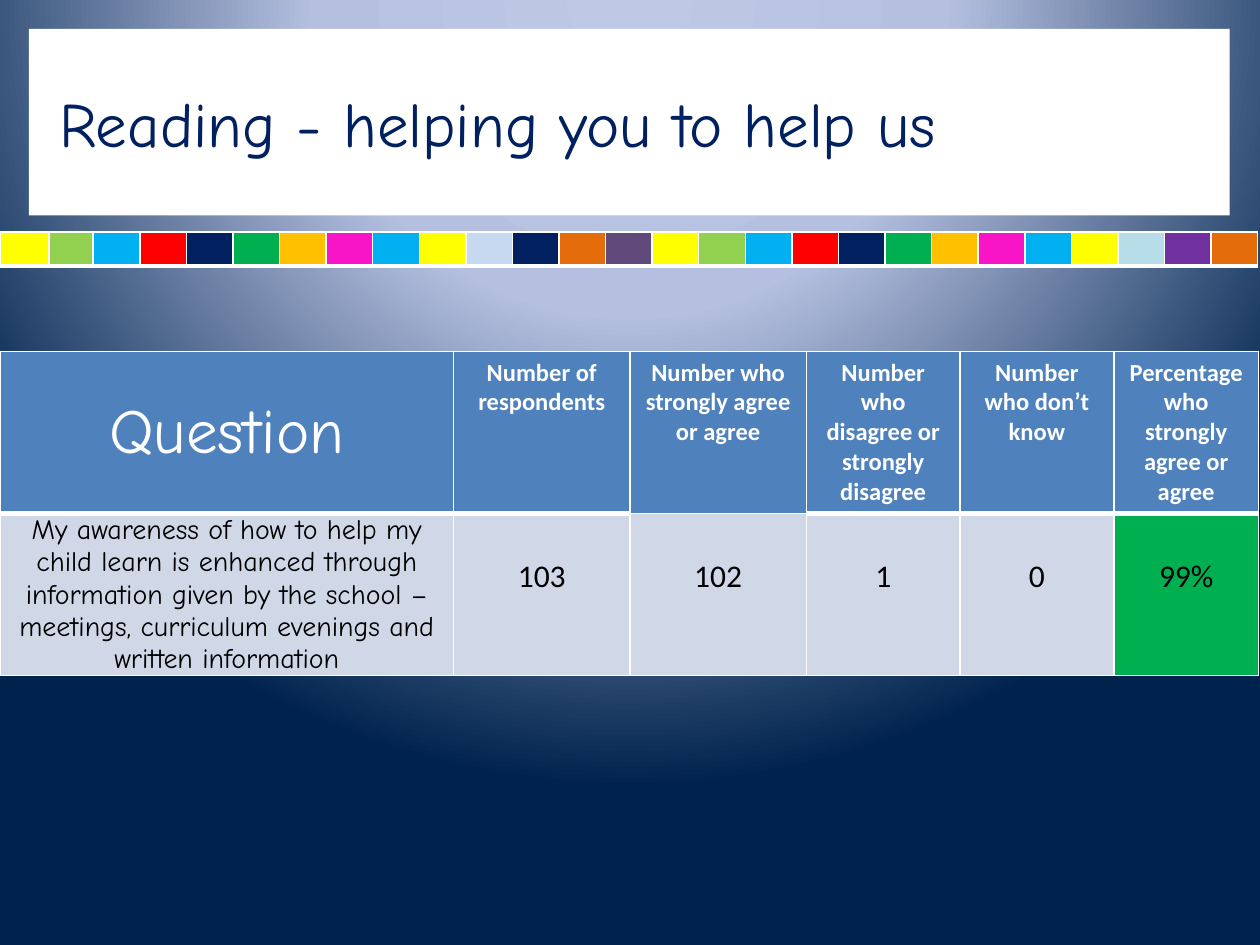
"""Build the reading survey slide with its title, colour strip and results table."""
from lxml.etree import SubElement
from pptx import Presentation
from pptx.dml.color import RGBColor
from pptx.enum.text import MSO_ANCHOR, PP_ALIGN
from pptx.oxml import parse_xml
from pptx.oxml.ns import nsdecls, qn
from pptx.util import Inches, Pt

THEME = {
    "display": "Comic Neue", "text": "Calibri",
    "white": "FFFFFF", "black": "000000", "navy": "002060",
    "header": "4F81BD", "body": "D0D8E8", "good": "00B050",
    "title_size": 36, "header_size": 14, "question_size": 16, "value_size": 18,
    "backdrop": [(0, "BFC9E5"), (40, "B5C0E0"), (100, "00234D")],
}

TITLE = "Reading - helping you to help us"
HEADERS = [
    "Question", "Number of respondents", "Number who strongly agree or agree",
    "Number who disagree or strongly disagree", "Number who don’t know",
    "Percentage who strongly agree or agree",
]
ANSWERS = [
    "My awareness of how to help my child learn is enhanced through information "
    "given by the school – meetings, curriculum evenings and written information",
    "103", "102", "1", "0", "99%",
]
SURVEY_COLS = [3.6, 1.4, 1.4, 1.22, 1.22, 1.15]
SURVEY_ROWS = [1.28, 1.28]

RUN = ["FFFF00", "92D050", "00B0F0", "FF0000", "002060", "00B050",
       "FFC000", "F715C7", "00B0F0", "FFFF00"]
STRIP = RUN + ["C6D9F1", "002060", "E46C0A", "604A7B"] + RUN + ["B7DEE8", "7030A0", "E46C0A"]
STRIP_COLS = [0.39, 0.35] + [0.37] * (len(STRIP) - 2)


def set_backdrop(s):
    s.background.fill.solid()
    bg = s.element.find(".//" + qn("p:bgPr"))
    stops = "".join(f'<a:gs pos="{pos * 1000}"><a:srgbClr val="{color}"/></a:gs>'
                    for pos, color in THEME["backdrop"])
    bg.replace(bg[0], parse_xml(
        f'<a:gradFill {nsdecls("a")} rotWithShape="1"><a:gsLst>{stops}</a:gsLst>'
        '<a:path path="circle"><a:fillToRect l="50000" t="-80000" r="50000" b="180000"/>'
        "</a:path></a:gradFill>"))


def paint(target, color):
    target.fill.solid()
    target.fill.fore_color.rgb = RGBColor.from_string(color)


def write(p, text, font, size, color, bold=False, align=PP_ALIGN.CENTER):
    p.alignment = align
    r = p.add_run()
    r.text = text
    for name, value in {"name": font, "size": Pt(size), "bold": bold}.items():
        setattr(r.font, name, value)
    r.font.color.rgb = RGBColor.from_string(color)


def set_margins(cell, **margins):
    for side, value in margins.items():
        setattr(cell, f"margin_{side}", Inches(value))


def format_cell(cell, color, bottom=1):
    tcPr = cell._tc.get_or_add_tcPr()
    for side, width in {"L": 1, "R": 1, "T": 1, "B": bottom}.items():
        ln = SubElement(tcPr, qn(f"a:ln{side}"), w=str(Pt(width)))
        SubElement(SubElement(ln, qn("a:solidFill")), qn("a:srgbClr"), val=THEME["white"])
    paint(cell, color)


def add_grid(s, top, cols, rows):
    frame = s.shapes.add_table(len(rows), len(cols), 0, Inches(top),
                               Inches(sum(cols)), Inches(sum(rows)))
    table = frame.table
    for col, width in zip(table.columns, cols):
        col.width = Inches(width)
    for row, height in zip(table.rows, rows):
        row.height = Inches(height)
    return table


def add_title(s):
    sp = s.shapes.title
    box = {"left": 0.23, "top": 0.23, "width": 9.53, "height": 1.48}
    for name, value in box.items():
        setattr(sp, name, Inches(value))
    paint(sp, THEME["white"])
    tf = sp.text_frame
    tf.vertical_anchor = MSO_ANCHOR.MIDDLE
    tf.margin_left = Inches(0.24)
    write(tf.paragraphs[0], TITLE, THEME["display"], THEME["title_size"],
          THEME["navy"], align=PP_ALIGN.LEFT)


def add_survey(s):
    table = add_grid(s, 2.79, SURVEY_COLS, SURVEY_ROWS)
    last = len(HEADERS) - 1
    for i, (header, answer) in enumerate(zip(HEADERS, ANSWERS)):
        head, body = table.cell(0, i), table.cell(1, i)
        format_cell(head, THEME["header"], bottom=1 if i == 2 else 3)
        format_cell(body, THEME["good"] if i == last else THEME["body"])
        if i == 0:
            for cell in (head, body):
                cell.vertical_anchor = MSO_ANCHOR.MIDDLE
                set_margins(cell, left=0.01, right=0.01, top=0.01, bottom=0)
        else:
            set_margins(body, top=0.35)
        font = THEME["text"] if i else THEME["display"]
        write(head.text_frame.paragraphs[0], header, font,
              THEME["header_size" if i else "title_size"], THEME["white"], bold=i > 0)
        write(body.text_frame.paragraphs[0], answer, font,
              THEME["value_size" if i else "question_size"], THEME["black"])


def add_strip(s):
    table = add_grid(s, 1.84, STRIP_COLS, [0.27])
    for cell, color in zip(table.rows[0].cells, STRIP):
        format_cell(cell, color, bottom=3)
        set_margins(cell, left=0, right=0, top=0, bottom=0)
        SubElement(cell.text_frame.paragraphs[0]._p, qn("a:endParaRPr"), sz="800")


def main():
    prs = Presentation()
    prs.slide_width, prs.slide_height = Inches(10), Inches(7.5)
    s = prs.slides.add_slide(prs.slide_layouts[5])
    set_backdrop(s)
    add_survey(s)
    add_title(s)
    add_strip(s)
    prs.save("out.pptx")


if __name__ == "__main__":
    main()
